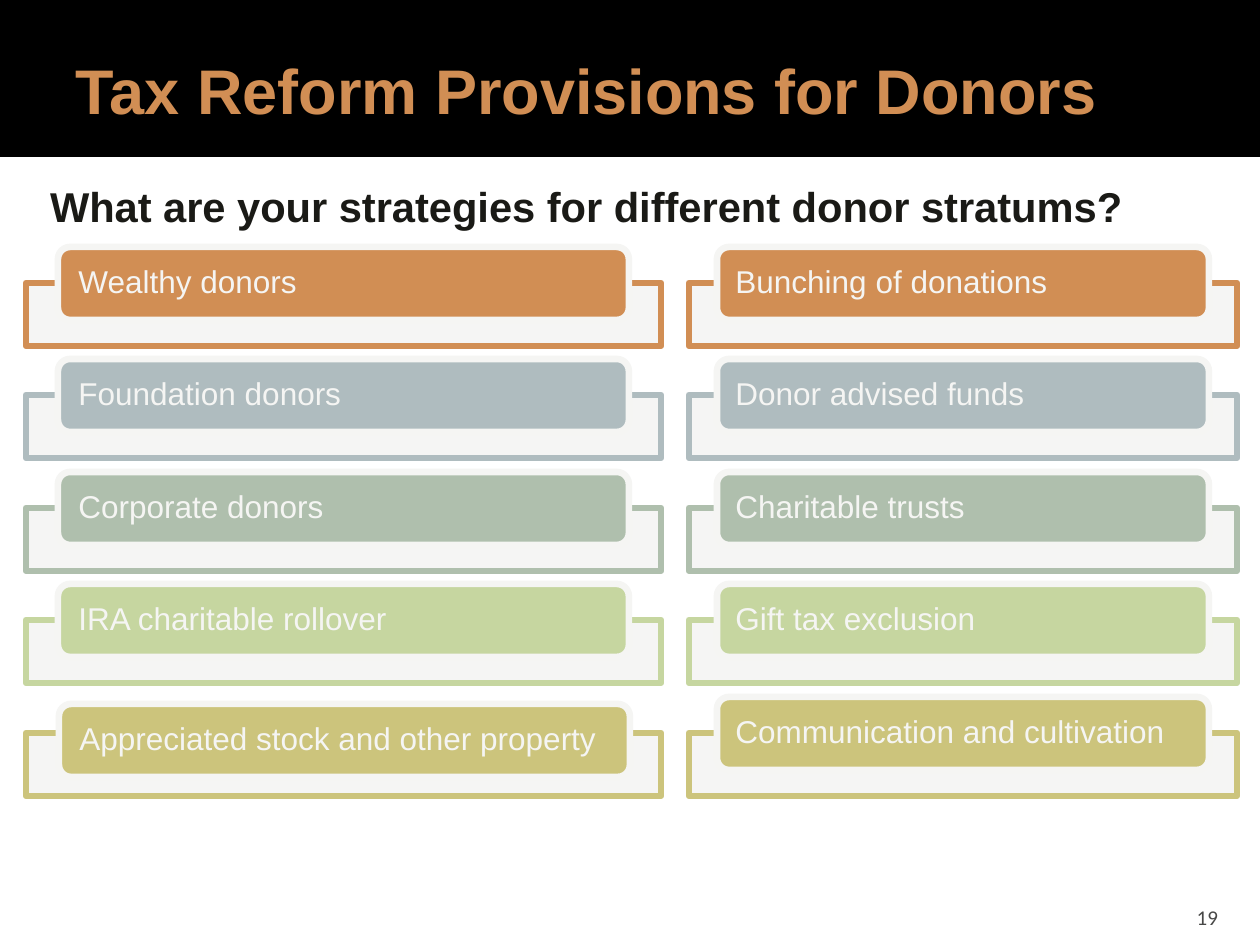
from pptx import Presentation
from pptx.dml.color import RGBColor
from pptx.enum.shapes import MSO_SHAPE as SHAPE
from pptx.enum.text import MSO_ANCHOR as ANCHOR, MSO_AUTO_SIZE as AUTO, PP_ALIGN as ALIGN
from pptx.oxml.ns import qn
from pptx.util import Emu, Pt
from lxml.etree import SubElement

PX = 914400 // 126
COLORS = {
    "band": "000000", "title": "D18E54", "heading": "1A1A16",
    "number": "484847", "light": "F5F5F3",
}
ROW_COLORS = ["D18E54", "AFBCBF", "AFBFAD", "C6D6A0", "CCC47C"]


def set_text(sp, text, size, color, font="Arial", bold=False,
             align=ALIGN.LEFT, anchor=ANCHOR.MIDDLE, insets=(0, 0, 0, 0)):
    tf = sp.text_frame
    tf.text = text
    tf.word_wrap = True
    tf.auto_size = AUTO.NONE
    tf.vertical_anchor = anchor
    tf.margin_left, tf.margin_top, tf.margin_right, tf.margin_bottom = [
        Emu(v * PX) for v in insets]
    p = tf.paragraphs[0]
    p.alignment = align
    f = p.runs[0].font
    f.name, f.size, f.bold = font, Pt(size), bold
    f.color.rgb = RGBColor.from_string(color)
    return p


def add_box(kind, box, fill, line=None):
    sp = s.shapes.add_shape(kind, *[Emu(v * PX) for v in box])
    sp.shadow.inherit = False
    sp.fill.solid()
    sp.fill.fore_color.rgb = RGBColor.from_string(fill)
    if line:
        sp.line.color.rgb = RGBColor.from_string(line)
        sp.line.width = Pt(3.78)
    else:
        sp.line.fill.background()
    return sp


prs = Presentation()
prs.slide_width, prs.slide_height = Emu(1260 * PX), Emu(945 * PX)
s = prs.slides.add_slide(prs.slide_layouts[1])
title, body = s.shapes.title, s.placeholders[1]

# Header band, sent behind the title
band = add_box(SHAPE.RECTANGLE, (0, 0, 1260, 157), COLORS["band"])
title._element.addprevious(band._element)

# Title and question
for sp, box in ((title, (63, 21, 1134, 136)), (body, (26, 168, 1207, 71))):
    sp.left, sp.top, sp.width, sp.height = [Emu(v * PX) for v in box]
set_text(title, "Tax Reform Provisions for Donors", 36, COLORS["title"],
         bold=True, insets=(13, 6, 6, 6))
p = set_text(body, "What are your strategies for different donor stratums?", 23.8,
             COLORS["heading"], bold=True, anchor=ANCHOR.TOP, insets=(8, 13, 13, 6))
p.space_before = Pt(0)
pPr = p._p.get_or_add_pPr()
pPr.set("marL", str(16 * PX))
pPr.set("indent", "0")
SubElement(pPr, qn("a:buNone"))

# Slide number
number = s.shapes.add_textbox(*[Emu(v * PX) for v in (1130, 892, 101, 38)])
set_text(number, "19", 12, COLORS["number"], font="Calibri", align=ALIGN.RIGHT,
         anchor=ANCHOR.BOTTOM, insets=(13, 6, 13, 0))

# Two columns: frame left and width, label left and width, label inset, labels
columns = [
    (689, 548, 717, 492, 15,
     ["Bunching of donations", "Donor advised funds", "Charitable trusts",
      "Gift tax exclusion", "Communication and cultivation"]),
    (26, 635, 58, 571, 17,
     ["Wealthy donors", "Foundation donors", "Corporate donors",
      "IRA charitable rollover", "Appreciated stock and other property"]),
]
LOWERED = "Appreciated stock and other property"
for frame_x, frame_w, label_x, label_w, inset, labels in columns:
    for i, (label, color) in enumerate(zip(labels, ROW_COLORS)):
        top = 247 + i * 225 // 2
        frame = add_box(SHAPE.RECTANGLE, (frame_x, top + 36, frame_w, 63),
                        COLORS["light"], color)
        fill_color = frame.fill._xPr.find(qn("a:solidFill"))[0]
        SubElement(fill_color, qn("a:alpha")).set("val", "90000")

        # The last label on the left sits slightly lower
        dx, dy = (1, 7) if label == LOWERED else (0, 0)
        pill = add_box(SHAPE.ROUNDED_RECTANGLE,
                       (label_x + dx, top + dy, label_w, 73), color, COLORS["light"])
        p = set_text(pill, label, 18, COLORS["light"], insets=(inset, 0, inset, 0))
        p.line_spacing = 0.9

prs.save("out.pptx")
